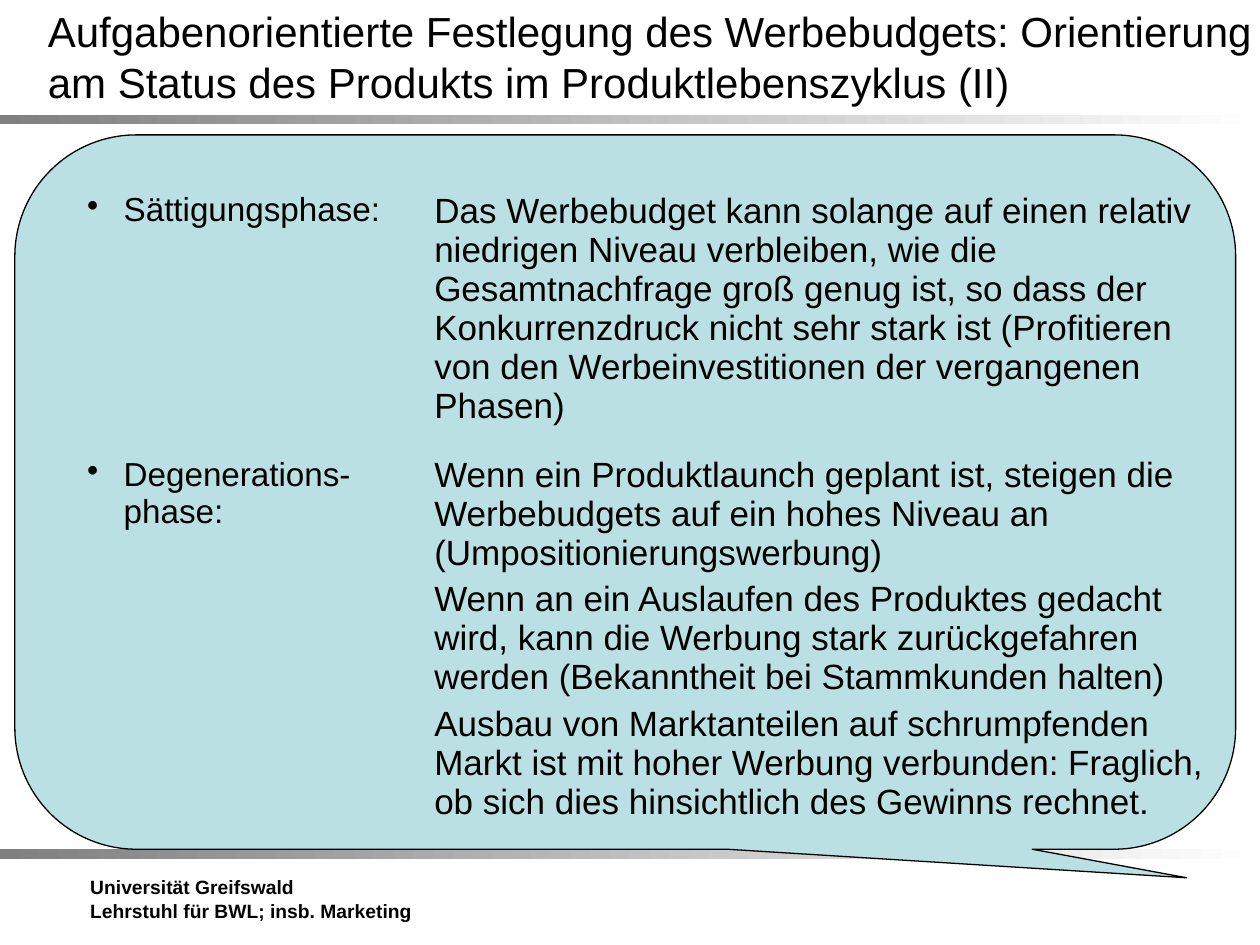
from lxml import etree
from pptx import Presentation
from pptx.dml.color import RGBColor
from pptx.enum.shapes import MSO_SHAPE
from pptx.enum.text import MSO_ANCHOR, MSO_AUTO_SIZE, PP_ALIGN
from pptx.oxml.ns import qn
from pptx.util import Cm, Pt

RECTANGLE = MSO_SHAPE.RECTANGLE
CALLOUT = MSO_SHAPE.ROUNDED_RECTANGULAR_CALLOUT
MIDDLE, TOP = MSO_ANCHOR.MIDDLE, MSO_ANCHOR.TOP
LEFT = PP_ALIGN.LEFT
NO_FIT = MSO_AUTO_SIZE.NONE
TITLE_ONLY = 5
PLAIN_TABLE = "{2D5ABB26-0587-4C30-8999-92F81FD0307C}"

COLORS = {"text": "000000", "bubble": "BBE0E3", "bar_start": "808080", "bar_end": "FFFFFF"}
FORMATS = {
    "title": {"name": "Arial", "size": Pt(24), "bold": False},
    "footer": {"name": "Arial", "size": Pt(11), "bold": True},
    "phase": {"name": "Arial", "size": Pt(19), "bold": False},
    "detail": {"name": "Arial", "size": Pt(20), "bold": False},
}
TITLE = ("Aufgabenorientierte Festlegung des Werbebudgets: Orientierung "
         "am Status des Produkts im Produktlebenszyklus (II)")
FOOTER = ["Universität Greifswald", "Lehrstuhl für BWL; insb. Marketing"]
PHASES = [
    ("Sättigungsphase:", [
        "Das Werbebudget kann solange auf einen relativ niedrigen Niveau verbleiben, "
        "wie die Gesamtnachfrage groß genug ist, so dass der Konkurrenzdruck nicht sehr "
        "stark ist (Profitieren von den Werbeinvestitionen der vergangenen Phasen)",
    ]),
    ("Degenerations-phase:", [
        "Wenn ein Produktlaunch geplant ist, steigen die Werbebudgets auf ein hohes "
        "Niveau an (Umpositionierungswerbung)",
        "Wenn an ein Auslaufen des Produktes gedacht wird, kann die Werbung stark "
        "zurückgefahren werden (Bekanntheit bei Stammkunden halten)",
        "Ausbau von Marktanteilen auf schrumpfenden Markt ist mit hoher Werbung "
        "verbunden: Fraglich, ob sich dies hinsichtlich des Gewinns rechnet.",
    ]),
]


def color(name):
    """Return the named colour."""
    return RGBColor.from_string(COLORS[name])


def write(frame, texts, style, gap=0, bullet=False):
    """Fill a text frame with one formatted paragraph per text."""
    for index, text in enumerate(texts):
        para = frame.paragraphs[0] if index == 0 else frame.add_paragraph()
        para.alignment = LEFT
        para.space_before = Pt(gap if index else 0)
        if bullet:
            add_bullet(para)
        span = para.add_run()
        span.text = text
        for key, value in FORMATS[style].items():
            setattr(span.font, key, value)
        span.font.color.rgb = color("text")


def add_bullet(para):
    """Give a paragraph a hanging round bullet."""
    properties = para._p.get_or_add_pPr()
    properties.set("marL", str(Cm(0.74)))
    properties.set("indent", str(Cm(-0.74)))
    etree.SubElement(properties, qn("a:buChar")).set("char", "•")


def set_title(page):
    """Place and format the title placeholder."""
    title = page.shapes.title
    title.left, title.top, title.width, title.height = Cm(0.71), Cm(0.33), Cm(25.02), Cm(1.6)
    frame = title.text_frame
    frame.auto_size = NO_FIT
    frame.word_wrap = True
    frame.vertical_anchor = MIDDLE
    write(frame, [TITLE], "title")


def add_bar(page, top):
    """Draw a full-width bar that fades to the right."""
    bar = page.shapes.add_shape(RECTANGLE, 0, top, Cm(25.4), Cm(0.2))
    bar.shadow.inherit = False
    bar.line.fill.background()
    bar.fill.gradient()
    bar.fill.gradient_angle = 0
    for stop, name in zip(bar.fill.gradient_stops, ("bar_start", "bar_end")):
        stop.color.rgb = color(name)


def add_footer(page):
    """Add the institution lines."""
    box = page.shapes.add_textbox(Cm(1.57), Cm(17.53), Cm(7.39), Cm(1.5))
    box.text_frame.word_wrap = False
    write(box.text_frame, FOOTER, "footer")


def add_bubble(page):
    """Draw the callout behind the table."""
    bubble = page.shapes.add_shape(CALLOUT, Cm(0.3), Cm(2.72), Cm(24.61), Cm(14.4))
    bubble.shadow.inherit = False
    for index, value in enumerate((0.46, 0.54, 0.17)):
        bubble.adjustments[index] = value
    bubble.fill.solid()
    bubble.fill.fore_color.rgb = color("bubble")
    bubble.line.color.rgb = color("text")
    bubble.line.width = Pt(0.75)


def add_phases(page):
    """Add the table of phases and their budget advice."""
    holder = page.shapes.add_table(len(PHASES), 2, Cm(1.5), Cm(3.73), Cm(23.4), Cm(13.54))
    table = holder.table
    table.first_row = table.horz_banding = False
    table._tbl.tblPr.find(qn("a:tableStyleId")).text = PLAIN_TABLE
    for column, width in zip(table.columns, (7, 16.4)):
        column.width = Cm(width)
    for row, height in zip(table.rows, (4.98, 8.56)):
        row.height = Cm(height)
    for row, (phase, details) in zip(table.rows, PHASES):
        for cell in row.cells:
            cell.fill.background()
            cell.vertical_anchor = TOP
        write(row.cells[0].text_frame, [phase], "phase", bullet=True)
        write(row.cells[1].text_frame, details, "detail", gap=4)


def main():
    """Build and save the slide."""
    deck = Presentation()
    deck.slide_width, deck.slide_height = Cm(25.4), Cm(19.05)
    page = deck.slides.add_slide(deck.slide_layouts[TITLE_ONLY])
    set_title(page)
    for top in (2.31, 17.12):
        add_bar(page, Cm(top))
    add_footer(page)
    add_bubble(page)
    add_phases(page)
    deck.save("out.pptx")


if __name__ == "__main__":
    main()
